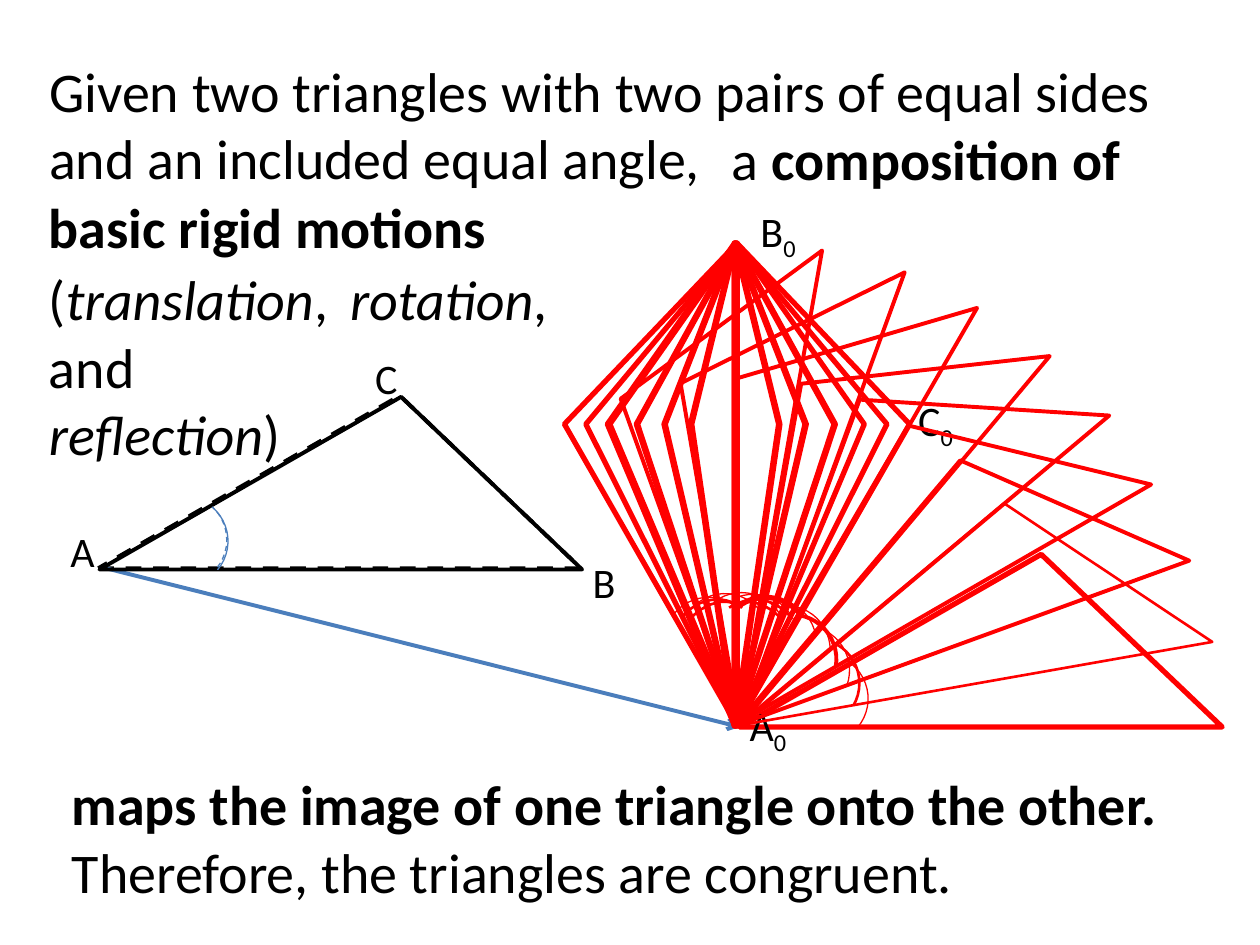
from math import cos, radians, sin

from lxml.etree import SubElement
from pptx import Presentation
from pptx.dml.color import RGBColor
from pptx.enum.dml import MSO_LINE
from pptx.enum.shapes import MSO_CONNECTOR, MSO_SHAPE
from pptx.enum.text import MSO_ANCHOR, MSO_AUTO_SIZE, PP_ALIGN
from pptx.oxml.ns import qn
from pptx.util import Inches, Pt

BLACK = RGBColor(0x00, 0x00, 0x00)
RED = RGBColor(0xFF, 0x00, 0x00)
BLUE = RGBColor(0x4B, 0x7E, 0xBC)
FONT = "Calibri"

# Grid of 100 columns by 75 rows; one cell is a tenth of an inch
CELL = Inches(10) // 100
BASE, HIGH = 38.3, 13.7      # triangle base and full height
PEAK = 0.625                 # share of the base where C stands
ARC, OUT, UP = 7.1, 6.65, 2.25   # angle mark: size and centre from A
TILT = 39.9                  # turn of the angle mark
FOOT = 57.6                  # row of the point A0


def cell(num):
    return round(num * CELL)


def place(shape, left, top, width, height):
    shape.left, shape.top = cell(left), cell(top)
    shape.width, shape.height = cell(width), cell(height)


def write(frame, lines, size=32, align=PP_ALIGN.LEFT):
    """Lines hold (text, style) runs; style: b bold, i italic, s subscript."""
    frame.word_wrap = True
    frame.auto_size = MSO_AUTO_SIZE.SHAPE_TO_FIT_TEXT
    frame.vertical_anchor = MSO_ANCHOR.TOP
    for num, runs in enumerate(lines):
        para = frame.add_paragraph() if num else frame.paragraphs[0]
        para.alignment = align
        para.space_before = Pt(0)
        for text, style in runs:
            if text == "\n":
                para.add_line_break()
                continue
            run = para.add_run()
            run.text = text
            font = run.font
            font.name, font.size = FONT, Pt(size)
            font.color.rgb = BLACK
            font.bold, font.italic = "b" in style, "i" in style
            if "s" in style:
                run._r.get_or_add_rPr().set("baseline", "-25000")


def note(slide, box, runs, **form):
    shape = slide.shapes.add_textbox(*map(cell, box))
    write(shape.text_frame, [runs], **form)


def label(slide, left, top, name, sub=""):
    runs = [(name, "")] + ([(sub, "s")] if sub else [])
    note(slide, (left, top, 7.5, 5), runs, size=24, align=PP_ALIGN.CENTER)


def ink(item, color, width, dash=False):
    item.line.color.rgb = color
    item.line.width = Pt(width)
    if dash:
        item.line.dash_style = MSO_LINE.DASH


def spin(x, y, dx, dy, turn, flip):
    """Point (dx, dy) turned around (x, y), mirrored left to right if asked."""
    ang = radians(turn)
    side = dx * cos(ang) - dy * sin(ang)
    return x + (-side if flip else side), y + dx * sin(ang) + dy * cos(ang)


def pose(shape, turn, flip):
    shape.shadow.inherit = False
    shape.rotation = (-turn if flip else turn) % 360
    if flip:
        shape._element.spPr.find(qn("a:xfrm")).set("flipH", "1")


def figure(slide, spots, turn=0, high=HIGH, flip=False, color=RED,
           mark=RED, width=3, arc=None, dash=False):
    """Group of triangles with corner A at each spot, and an angle mark."""
    group = slide.shapes.add_group_shape().shapes
    for x, y in spots:
        mid, row = spin(x, y, BASE / 2, -high / 2, turn, flip)
        left, low = mid - BASE / 2, row + high / 2
        path = group.build_freeform(cell(left), cell(low))
        path.add_line_segments([
            (cell(left + BASE), cell(low)),
            (cell(left + BASE * PEAK), cell(low - high))], close=True)
        shape = path.convert_to_shape()
        shape.fill.background()
        ink(shape, color, width, dash)
        pose(shape, turn, flip)
    if arc:
        part = high / HIGH
        mid, row = spin(*spots[0], OUT, -UP * part, turn, flip)
        tall = ARC * part
        curve = group.add_shape(
            MSO_SHAPE.ARC, cell(mid - ARC / 2), cell(row - tall / 2),
            cell(ARC), cell(tall))
        curve.fill.background()
        ink(curve, mark, arc, dash)
        pose(curve, turn + TILT, flip)


def line(slide, start, end, color, width, arrow=False):
    link = slide.shapes.add_connector(
        MSO_CONNECTOR.STRAIGHT, *map(cell, start + end))
    ink(link, color, width)
    if arrow:
        SubElement(link.line._get_or_add_ln(), qn("a:tailEnd"), type="arrow")
    SubElement(link._element.spPr, qn("a:effectLst"))


def fan(slide):
    # Rotation: ten degrees a step, up to a quarter turn
    cols = [58.5, 58.4, 58.2, 58.7, 58.7, 58.4, 58.7, 58.6, 58.5]
    widths = {1: 1.5, 9: 3}
    marks = {1: 1.5, 3: 2.25}
    for step, col in enumerate(cols, 1):
        figure(slide, [(col, FOOT)], turn=-10 * step,
               width=widths.get(step, 2.25), arc=marks.get(step, 0.75))


def fold(slide):
    # Reflection: ever flatter triangles on both sides of A0 B0
    figure(slide, [(58.5, FOOT)], turn=-90, flip=True, arc=3)
    steps = [
        (12, [58.5], [58.4], 1.5),
        (10.1, [58.3, 58.5], [58.5], 1.5),
        (7.9, [58.4, 58.5], [58.4, 58.3], None),
        (5.6, [58.3, 58.4], [58.4, 58.3], None),
        (3.5, [58.3, 58.4], [58.4, 58.3], None)]
    for high, *sides, arc in steps:
        for flip, cols in enumerate(sides):
            figure(slide, [(col, FOOT) for col in cols], turn=-90,
                   high=high, flip=bool(flip), arc=arc)


def words(slide):
    # Title and closing statement
    title, body = slide.placeholders
    place(title, 2.9, 4, 90.2, 11.8)
    write(title.text_frame, [[(
        "Given two triangles with two pairs of equal sides "
        "and an included equal angle,", "")]])
    place(body, 4.7, 60.6, 89.9, 11.8)
    write(body.text_frame, [
        [("maps the image of one triangle onto the other.", "b")],
        [("Therefore, the triangles are congruent.", "")]])
    for para in body.text_frame.paragraphs:
        form = para._p.get_or_add_pPr()
        form.set("marL", "0")
        form.set("indent", "0")
        SubElement(form, qn("a:buNone"))

    # Phrases around the figure
    note(slide, (2.9, 14.8, 41.6, 6.4), [("basic rigid motions", "b")])
    note(slide, (57.1, 9.4, 33.5, 6.4), [("a ", ""), ("composition of", "b")])
    note(slide, (2.9, 20.5, 24.8, 6.4),
         [("(", ""), ("translation", "i"), (",", "")])
    note(slide, (26.8, 20.5, 23, 6.4), [("rotation", "i"), (",", "")])
    note(slide, (2.9, 25.9, 33, 11.8),
         [("and ", ""), ("\n", ""), ("reflection", "i"), (")", "")])


def main():
    deck = Presentation()
    deck.slide_width, deck.slide_height = Inches(10), Inches(7.5)
    slide = deck.slides.add_slide(deck.slide_layouts[1])
    words(slide)

    # Given triangle, dashed below and solid above
    first = dict(color=BLACK, mark=BLUE, width=2.25, arc=0.75)
    figure(slide, [(7.8, 45.1)], dash=True, **first)
    label(slide, 2.8, 41.2, "A")
    label(slide, 44.2, 43.7, "B")
    label(slide, 26.9, 27.5, "C")

    # Translation to A0
    figure(slide, [(58.7, 57.7)], arc=0.75)
    line(slide, (8.4, 45.1), (58.7, 57.7), BLUE, 2.25, arrow=True)
    figure(slide, [(7.9, 45.2)], **first)
    label(slide, 57.2, 55, "A", "0")
    label(slide, 70.5, 30.8, "C", "0")
    label(slide, 58, 15.8, "B", "0")

    fan(slide)
    fold(slide)
    line(slide, (58.4, 19.1), (58.4, 57.7), RED, 3)
    deck.save("out.pptx")


if __name__ == "__main__":
    main()
